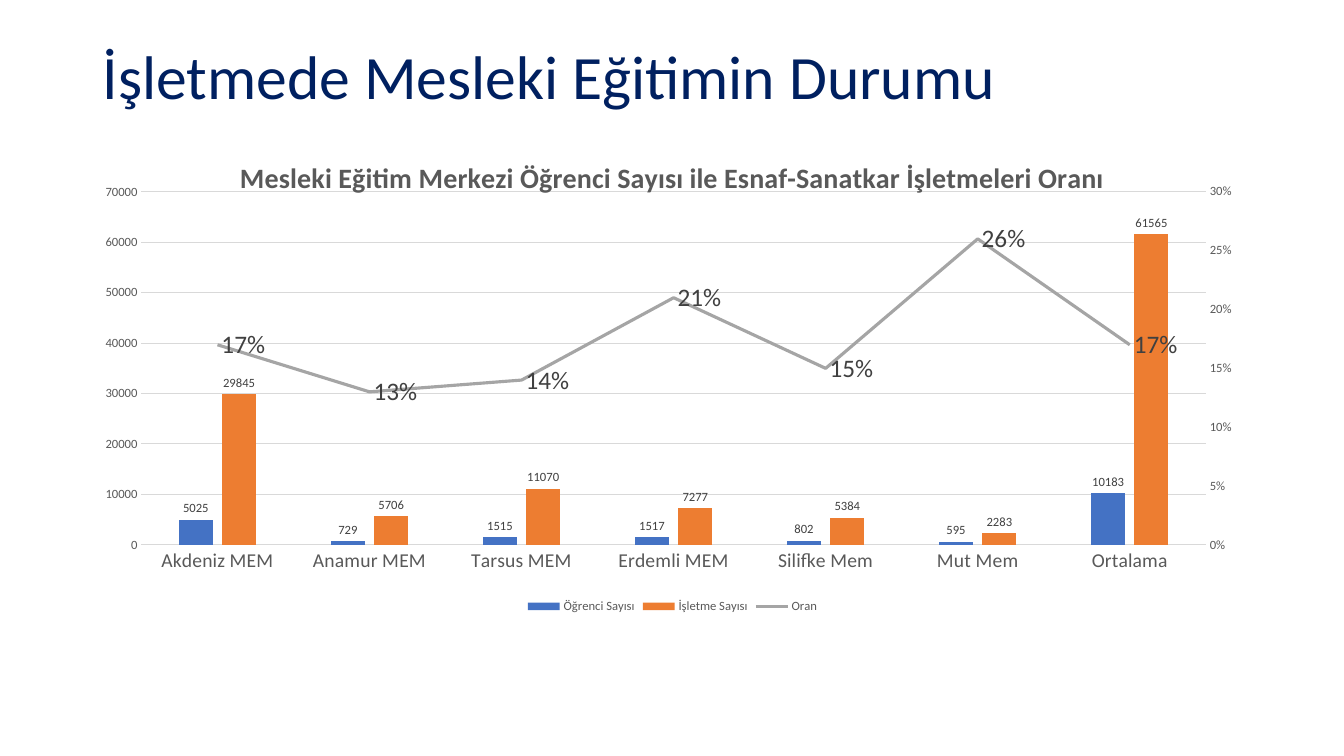
from pptx import Presentation
from pptx.chart.axis import ValueAxis
from pptx.chart.data import CategoryChartData
from pptx.dml.color import RGBColor
from pptx.enum.chart import XL_CHART_TYPE as ChartType
from pptx.enum.chart import XL_LABEL_POSITION as LabelPos
from pptx.enum.chart import XL_LEGEND_POSITION as LegendPos
from pptx.enum.chart import XL_MARKER_STYLE as Marker
from pptx.enum.chart import XL_TICK_MARK as TickMark
from pptx.enum.text import MSO_ANCHOR, PP_ALIGN
from pptx.oxml import parse_xml
from pptx.oxml.ns import nsdecls, qn
from pptx.util import Inches, Pt

CENTERS = ["Akdeniz MEM", "Anamur MEM", "Tarsus MEM", "Erdemli MEM",
           "Silifke Mem", "Mut Mem", "Ortalama"]
STUDENTS = [5025, 729, 1515, 1517, 802, 595, 10183]
BUSINESSES = [29845, 5706, 11070, 7277, 5384, 2283, 61565]
RATIOS = [0.17, 0.13, 0.14, 0.21, 0.15, 0.26, 0.17]
GREY, LABEL_GREY, GRID_GREY = "595959", "404040", "D9D9D9"


def color(hex_code):
    return RGBColor.from_string(hex_code)


def style_font(font, size, hex_code, bold=False):
    font.name = "Calibri"
    font.size = Pt(size)
    font.bold = bold
    font.color.rgb = color(hex_code)


def style_line(line, hex_code, width):
    line.color.rgb = color(hex_code)
    line.width = Pt(width)


def style_labels(series, size, position, number_format):
    labels = series.data_labels
    labels.show_value = True
    labels.position = position
    labels.number_format = number_format
    labels.number_format_is_linked = False
    style_font(labels.font, size, LABEL_GREY)


def style_value_axis(axis, top, step, number_format):
    axis.minimum_scale, axis.maximum_scale, axis.major_unit = 0, top, step
    axis.major_tick_mark = axis.minor_tick_mark = TickMark.NONE
    axis.tick_labels.number_format = number_format
    axis.tick_labels.number_format_is_linked = False
    axis.format.line.fill.background()
    style_font(axis.tick_labels.font, 9, GREY)


def set_plot_layout(plot_area, x, y, w, h):
    for layout in plot_area.findall(qn("c:layout")):
        plot_area.remove(layout)
    sizes = "".join(f'<c:{tag} val="{size}"/>'
                    for tag, size in zip("xywh", (x, y, w, h)))
    plot_area.insert(0, parse_xml(
        f'<c:layout {nsdecls("c")}><c:manualLayout><c:layoutTarget val="inner"/>'
        f'<c:xMode val="edge"/><c:yMode val="edge"/>{sizes}'
        '</c:manualLayout></c:layout>'))


def move_ratio_to_right_axis(plot_area):
    bars = plot_area.find(qn("c:barChart"))
    ratio = bars.findall(qn("c:ser"))[-1]
    for invert in ratio.findall(qn("c:invertIfNegative")):
        ratio.remove(invert)
    ratio_lines = parse_xml(
        f'<c:lineChart {nsdecls("c")}><c:grouping val="standard"/>'
        '<c:varyColors val="0"/><c:marker val="1"/>'
        '<c:axId val="5001"/><c:axId val="5002"/></c:lineChart>')
    ratio_lines.insert(2, ratio)
    bars.addnext(ratio_lines)
    hidden_axis = parse_xml(
        f'<c:catAx {nsdecls("c")}><c:axId val="5001"/>'
        '<c:scaling><c:orientation val="minMax"/></c:scaling>'
        '<c:delete val="1"/><c:axPos val="b"/>'
        '<c:crossAx val="5002"/><c:crosses val="autoZero"/></c:catAx>')
    right_axis = parse_xml(
        f'<c:valAx {nsdecls("c")}><c:axId val="5002"/>'
        '<c:scaling><c:orientation val="minMax"/></c:scaling>'
        '<c:delete val="0"/><c:axPos val="r"/><c:tickLblPos val="nextTo"/>'
        '<c:crossAx val="5001"/><c:crosses val="max"/></c:valAx>')
    plot_area.find(qn("c:valAx")).addnext(right_axis)
    right_axis.addnext(hidden_axis)
    return ValueAxis(right_axis)


def add_heading(slide, left, top, width, height):
    heading = slide.shapes.title
    heading.left, heading.top, heading.width, heading.height = left, top, width, height
    frame = heading.text_frame
    frame.text = "İşletmede Mesleki Eğitimin Durumu"
    frame.vertical_anchor = MSO_ANCHOR.MIDDLE
    line = frame.paragraphs[0]
    line.alignment = PP_ALIGN.LEFT
    line.line_spacing = 0.9
    style_font(line.font, 44, "002060")


def add_ratio_chart(slide, left, top, width, height):
    figures = CategoryChartData(number_format="General")
    figures.categories = CENTERS
    figures.add_series("Öğrenci Sayısı", STUDENTS)
    figures.add_series("İşletme Sayısı", BUSINESSES)
    figures.add_series("Oran", RATIOS, number_format="0%")
    chart = slide.shapes.add_chart(
        ChartType.COLUMN_CLUSTERED, left, top, width, height, figures).chart
    style_font(chart.font, 10, "000000")

    chart.has_title = True
    chart_title = chart.chart_title.text_frame
    chart_title.text = "Mesleki Eğitim Merkezi Öğrenci Sayısı ile Esnaf-Sanatkar İşletmeleri Oranı"
    style_font(chart_title.paragraphs[0].font, 20, GREY, bold=True)

    chart.has_legend = True
    chart.legend.position = LegendPos.BOTTOM
    chart.legend.include_in_layout = False
    style_font(chart.legend.font, 9, GREY)

    centers = chart.category_axis
    centers.major_tick_mark = centers.minor_tick_mark = TickMark.NONE
    style_line(centers.format.line, GRID_GREY, 0.75)
    style_font(centers.tick_labels.font, 14, GREY)
    style_value_axis(chart.value_axis, 70000, 10000, "General")
    chart.value_axis.has_major_gridlines = True
    style_line(chart.value_axis.major_gridlines.format.line, GRID_GREY, 0.75)

    plot_area = chart.element.find(qn("c:chart")).find(qn("c:plotArea"))
    set_plot_layout(plot_area, 0.042, 0.112, 0.918, 0.736)
    style_value_axis(move_ratio_to_right_axis(plot_area), 0.3, 0.05, "0%")

    counts, ratios = chart.plots
    counts.vary_by_categories = False
    counts.gap_width, counts.overlap = 219, -27
    for series, fill in zip(counts.series, ("4472C4", "ED7D31")):
        series.format.fill.solid()
        series.format.fill.fore_color.rgb = color(fill)
        style_labels(series, 9, LabelPos.OUTSIDE_END, "General")
    ratio = ratios.series[0]
    ratio.smooth = False
    ratio.marker.style = Marker.NONE
    style_line(ratio.format.line, "A5A5A5", 2.25)
    style_labels(ratio, 18, LabelPos.RIGHT, "0%")


def main():
    deck = Presentation()
    deck.slide_width, deck.slide_height = Inches(13.33), Inches(7.5)
    slide = deck.slides.add_slide(deck.slide_layouts[5])
    left, width = Inches(0.92), Inches(11.5)
    add_heading(slide, left, Inches(0.06), width, Inches(1.45))
    add_ratio_chart(slide, left, Inches(1.37), width, Inches(4.76))
    deck.save("out.pptx")


if __name__ == "__main__":
    main()
